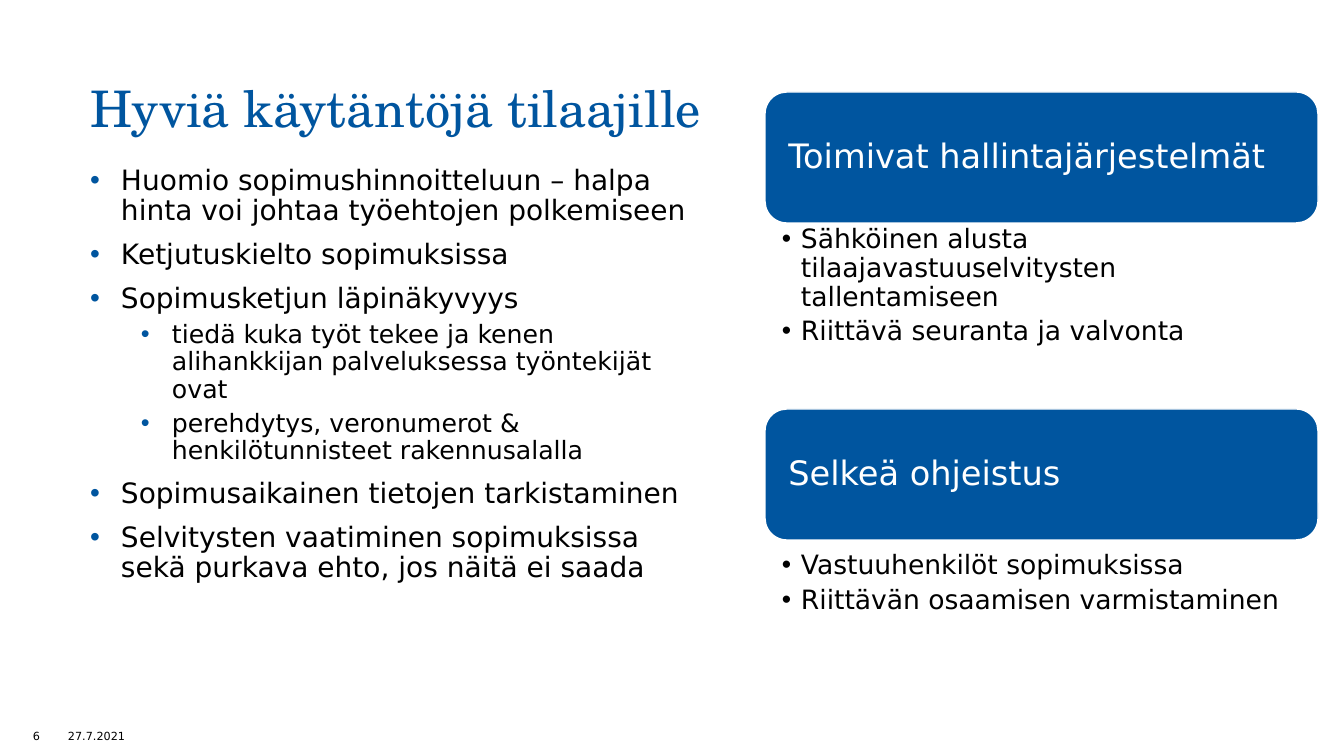
from pptx import Presentation
from pptx.dml.color import RGBColor
from pptx.enum.shapes import MSO_SHAPE
from pptx.enum.text import MSO_ANCHOR, PP_ALIGN
from pptx.util import Emu, Pt
from lxml.etree import SubElement
from pptx.oxml.ns import qn

SLIDE_W, SLIDE_H = 1344, 756
SCALE = 12192000 / SLIDE_W
BLUE, BLACK, WHITE = "00559F", "000000", "FFFFFF"
SANS, SERIF = "DejaVu Sans", "TeX Gyre Schola"

PRACTICES = [
    (0, "Huomio sopimushinnoitteluun – halpa hinta voi johtaa työehtojen polkemiseen"),
    (0, "Ketjutuskielto sopimuksissa"),
    (0, "Sopimusketjun läpinäkyvyys"),
    (1, "tiedä kuka työt tekee ja kenen alihankkijan palveluksessa työntekijät ovat"),
    (1, "perehdytys, veronumerot & henkilötunnisteet rakennusalalla"),
    (0, "Sopimusaikainen tietojen tarkistaminen"),
    (0, "Selvitysten vaatiminen sopimuksissa sekä purkava ehto, jos näitä ei saada"),
]
# Heading, gap between heading and list, list items
CARDS = [
    ("Toimivat hallintajärjestelmät", 0,
     ["Sähköinen alusta tilaajavastuuselvitysten tallentamiseen",
      "Riittävä seuranta ja valvonta"]),
    ("Selkeä ohjeistus", 9,
     ["Vastuuhenkilöt sopimuksissa", "Riittävän osaamisen varmistaminen"]),
]


def px(n):
    return Emu(round(n * SCALE))


def rgb(value):
    return RGBColor.from_string(value)


def set_frame(tf, insets=(10, 5, 10, 5), anchor=MSO_ANCHOR.TOP):
    tf.word_wrap = True
    tf.vertical_anchor = anchor
    tf.margin_left, tf.margin_top, tf.margin_right, tf.margin_bottom = map(px, insets)


def add_textbox(s, box, **frame):
    tf = s.shapes.add_textbox(*map(px, box)).text_frame
    set_frame(tf, **frame)
    return tf


def add_text(p, text, size, color=BLACK, font=SANS, align=PP_ALIGN.LEFT, spacing=0.9):
    p.alignment = align
    p.line_spacing = spacing
    r = p.add_run()
    r.text = text
    r.font.size = Pt(size)
    r.font.name = font
    r.font.color.rgb = rgb(color)


def set_bullet(p, color, left, hanging):
    pPr = p._p.get_or_add_pPr()
    pPr.set("marL", str(px(left)))
    pPr.set("indent", str(-px(hanging)))
    clr = SubElement(pPr, qn("a:buClr"))
    SubElement(clr, qn("a:srgbClr"), val=color)
    SubElement(pPr, qn("a:buFont"), typeface="Arial")
    SubElement(pPr, qn("a:buChar"), char="•")


def next_paragraph(tf, i):
    return tf.add_paragraph() if i else tf.paragraphs[0]


def add_title(s, box, text):
    title = s.shapes.title
    title.left, title.top, title.width, title.height = map(px, box)
    set_frame(title.text_frame, anchor=MSO_ANCHOR.BOTTOM)
    add_text(title.text_frame.paragraphs[0], text, 36, BLUE, SERIF)


def add_practices(s, box, items):
    tf = add_textbox(s, box)
    for i, (level, text) in enumerate(items):
        p = next_paragraph(tf, i)
        p.level = level
        set_bullet(p, BLUE, 31 + 51 * level, 31)
        p.space_before = Pt((5 if level else 10) if i else 0)
        add_text(p, text, 18 if level else 20)


def add_card(s, box, heading, gap, items):
    x, y, w, h = box
    head_h = 131
    # Heading
    sp = s.shapes.add_shape(MSO_SHAPE.ROUNDED_RECTANGLE, *map(px, (x, y, w, head_h)))
    sp.shadow.inherit = False
    sp.fill.solid()
    sp.fill.fore_color.rgb = rgb(BLUE)
    sp.line.color.rgb = rgb(WHITE)
    sp.line.width = Pt(1)
    set_frame(sp.text_frame, (17, 10, 17, 10), MSO_ANCHOR.MIDDLE)
    add_text(sp.text_frame.paragraphs[0], heading, 24, WHITE)
    # List
    list_top = head_h + gap
    tf = add_textbox(s, (x, y + list_top, w, h - list_top), insets=(17, 3, 19, 3))
    for i, text in enumerate(items):
        p = next_paragraph(tf, i)
        set_bullet(p, BLACK, 19, 19)
        p.space_after = Pt(4)
        add_text(p, text, 19)


def add_footer(s, box, number, date):
    x, y, w, h = box
    number_w = 50
    for left, width, text, align in (
        (x, number_w, number, PP_ALIGN.RIGHT),
        (x + number_w + 8, w - number_w - 8, date, PP_ALIGN.LEFT),
    ):
        tf = add_textbox(s, (left, y, width, h), anchor=MSO_ANCHOR.MIDDLE)
        add_text(tf.paragraphs[0], text, 8, align=align, spacing=1.0)


def main():
    prs = Presentation()
    prs.slide_width, prs.slide_height = px(SLIDE_W), px(SLIDE_H)
    s = prs.slides.add_slide(prs.slide_layouts[5])

    # Left column
    add_title(s, (80, 79, 638, 64), "Hyviä käytäntöjä tilaajille")
    add_practices(s, (80, 161, 638, 452), PRACTICES)

    # Right column
    for i, card in enumerate(CARDS):
        add_card(s, (765, 92 + 317 * i, 553, 288), *card)

    # Footer
    add_footer(s, (0, 716, 155, 40), "6", "27.7.2021")
    prs.save("out.pptx")


if __name__ == "__main__":
    main()
